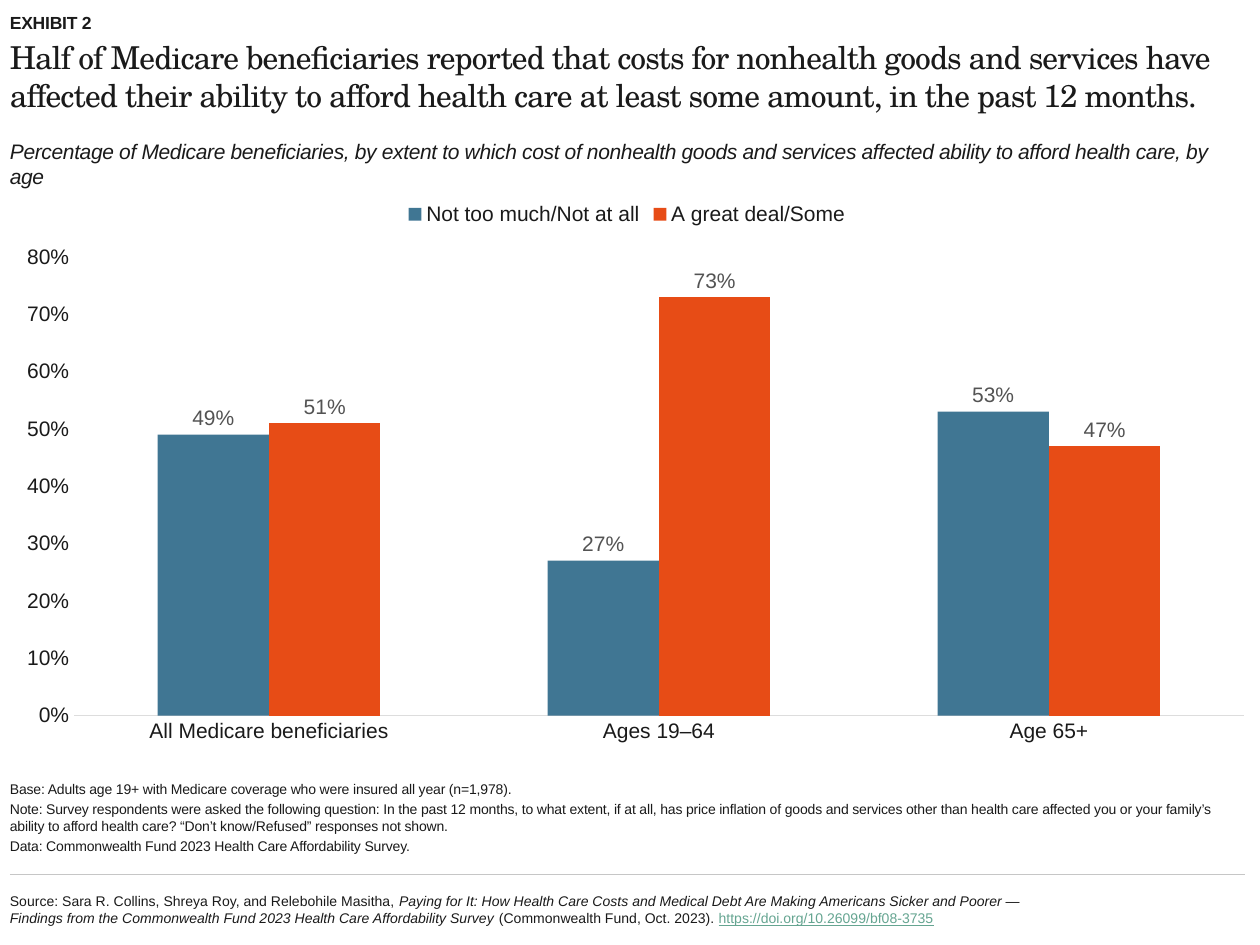
import pptx
import pptx.chart.data
import pptx.dml.color
import pptx.enum.chart
import pptx.enum.shapes
import pptx.enum.text
import pptx.oxml
import pptx.oxml.ns
import pptx.util
from pptx.util import Cm, Pt

INK = "1A1A1A"
LEFT, WIDTH = Cm(0.2), Cm(24.89)
ANCHOR = pptx.enum.text.MSO_ANCHOR


def rgb(value):
    return pptx.dml.color.RGBColor.from_string(value)


def write(box, top, height, paragraphs, anchor=ANCHOR.TOP, width=WIDTH,
          spacing=0, after=0, **base):
    """Place a text box and fill it with paragraphs of (text, format) runs."""
    box.left, box.top, box.width, box.height = LEFT, top, width, height
    frame = box.text_frame
    frame.word_wrap = True
    frame.auto_size = pptx.enum.text.MSO_AUTO_SIZE.NONE
    frame.vertical_anchor = anchor
    for side in ("left", "right", "top", "bottom"):
        setattr(frame, f"margin_{side}", 0)
    for index, runs in enumerate(paragraphs):
        paragraph = frame.paragraphs[0] if index == 0 else frame.add_paragraph()
        paragraph.alignment = pptx.enum.text.PP_ALIGN.LEFT
        paragraph.space_before, paragraph.space_after = Pt(0), Pt(after)
        for text, changes in runs:
            run = paragraph.add_run()
            run.text = text
            look = {"name": "Arial", "color": INK, **base, **changes}
            run.font.color.rgb = rgb(look.pop("color"))
            for key, value in look.items():
                setattr(run.font, key, value)
            if spacing:
                run.font._element.set("spc", str(spacing))


deck = pptx.Presentation()
deck.slide_width, deck.slide_height = Cm(25.4), Cm(19.05)
slide = deck.slides.add_slide(deck.slide_layouts[5])
shapes = slide.shapes

# Headings
write(shapes.title, Cm(0.76), Cm(2.11),
      [[("Half of Medicare beneficiaries reported that costs for nonhealth goods "
         "and services have affected their ability to afford health care at least "
         "some amount, in the past 12 months.", {})]],
      spacing=-50, size=Pt(18), name="TeX Gyre Schola")
exhibit, subtitle, notes, source = (
    shapes.add_textbox(0, 0, 0, 0) for _ in range(4))
write(exhibit, Cm(0.13), Cm(0.53), [[("EXHIBIT 2", {})]], ANCHOR.BOTTOM,
      spacing=-10, size=Pt(10), bold=True)
write(subtitle, Cm(2.79), Cm(1.02),
      [[("Percentage of Medicare beneficiaries, by extent to which cost of "
         "nonhealth goods and services affected ability to afford health care, "
         "by age", {})]],
      spacing=-20, size=Pt(12), italic=True)

# Chart
survey = pptx.chart.data.CategoryChartData(number_format="0%")
survey.categories = ["All Medicare beneficiaries", "Ages 19–64", "Age 65+"]
survey.add_series("Not too much/Not at all", [0.49, 0.27, 0.53])
survey.add_series("A great deal/Some", [0.51, 0.73, 0.47])
chart = shapes.add_chart(
    pptx.enum.chart.XL_CHART_TYPE.COLUMN_CLUSTERED,
    LEFT, Cm(3.81), WIDTH, Cm(11.43), survey).chart
chart.has_title = False
chart.has_legend = True
chart.legend.position = pptx.enum.chart.XL_LEGEND_POSITION.TOP
chart.legend.include_in_layout = False

plot = chart.plots[0]
plot.gap_width, plot.overlap, plot.vary_by_categories = 150, 0, False
plot.has_data_labels = True
labels = plot.data_labels
labels.show_value = True
labels.position = pptx.enum.chart.XL_LABEL_POSITION.OUTSIDE_END
labels.number_format, labels.number_format_is_linked = "0%", False

extent_axis, age_axis = chart.value_axis, chart.category_axis
for axis in (extent_axis, age_axis):
    axis.has_major_gridlines = False
    axis.major_tick_mark = pptx.enum.chart.XL_TICK_MARK.NONE
extent_axis.minimum_scale, extent_axis.maximum_scale = 0, 0.8
extent_axis.major_unit = 0.1
extent_axis.tick_labels.number_format = "0%"
extent_axis.tick_labels.number_format_is_linked = False
extent_axis.format.line.fill.background()
age_axis.format.line.color.rgb = rgb("DDDDDD")
age_axis.format.line.width = Pt(0.75)

for font, color in ((chart.font, INK), (chart.legend.font, INK),
                    (extent_axis.tick_labels.font, INK),
                    (age_axis.tick_labels.font, INK), (labels.font, "535353")):
    font.name, font.size = "Arial", Pt(12)
    font.color.rgb = rgb(color)

for series, color in zip(plot.series, ("115479", "E74C16")):
    series.format.fill.solid()
    series.format.fill.fore_color.rgb = rgb(color)
    series.invert_if_negative = False
blue = plot.series[0]._element.find(".//" + pptx.oxml.ns.qn("a:srgbClr"))
blue.append(pptx.oxml.parse_xml(
    f'<a:alpha {pptx.oxml.ns.nsdecls("a")} val="80000"/>'))

layout = pptx.oxml.parse_xml(
    f'<c:layout {pptx.oxml.ns.nsdecls("c")}><c:manualLayout>'
    '<c:layoutTarget val="inner"/><c:xMode val="edge"/><c:yMode val="edge"/>'
    '<c:x val="0.052"/><c:y val="0.12"/><c:w val="0.948"/><c:h val="0.809"/>'
    '</c:manualLayout></c:layout>')
plot_area = chart._chartSpace.chart.plotArea
for automatic in plot_area.findall(pptx.oxml.ns.qn("c:layout")):
    plot_area.remove(automatic)
plot_area.insert(0, layout)

# Notes and source
write(notes, Cm(15.95), Cm(1.27), [
    [("Base: Adults age 19+ with Medicare coverage who were insured all year "
      "(n=1,978).", {})],
    [("Note: Survey respondents were asked the following question: In the past "
      "12 months, to what extent, if at all, has price inflation of goods and "
      "services other than health care affected you or your family’s ability to "
      "afford health care? “Don’t know/Refused” responses not shown.", {})],
    [("Data: Commonwealth Fund 2023 Health Care Affordability Survey.", {})],
], ANCHOR.BOTTOM, spacing=-10, after=2, size=Pt(8))

divider = shapes.add_connector(pptx.enum.shapes.MSO_CONNECTOR.STRAIGHT,
                               LEFT, Cm(17.63), LEFT + WIDTH, Cm(17.63))
divider.line.color.rgb = rgb("C6C6C6")
divider.line.width = Pt(0.75)
divider._element.spPr.append(pptx.oxml.parse_xml(
    f'<a:effectLst {pptx.oxml.ns.nsdecls("a")}/>'))

write(source, Cm(17.75), Cm(1.17), [[
    ("Source: Sara R. Collins, Shreya Roy, and Relebohile Masitha, ", {}),
    ("Paying for It: How Health Care Costs and Medical Debt Are Making Americans "
     "Sicker and Poorer — Findings from the Commonwealth Fund 2023 Health Care "
     "Affordability Survey", {"italic": True}),
    (" (Commonwealth Fund, Oct. 2023). ", {}),
    ("https://doi.org/10.26099/bf08-3735", {"color": "65A591", "underline": True}),
]], ANCHOR.MIDDLE, width=Cm(20.68), size=Pt(8))

deck.save("out.pptx")
